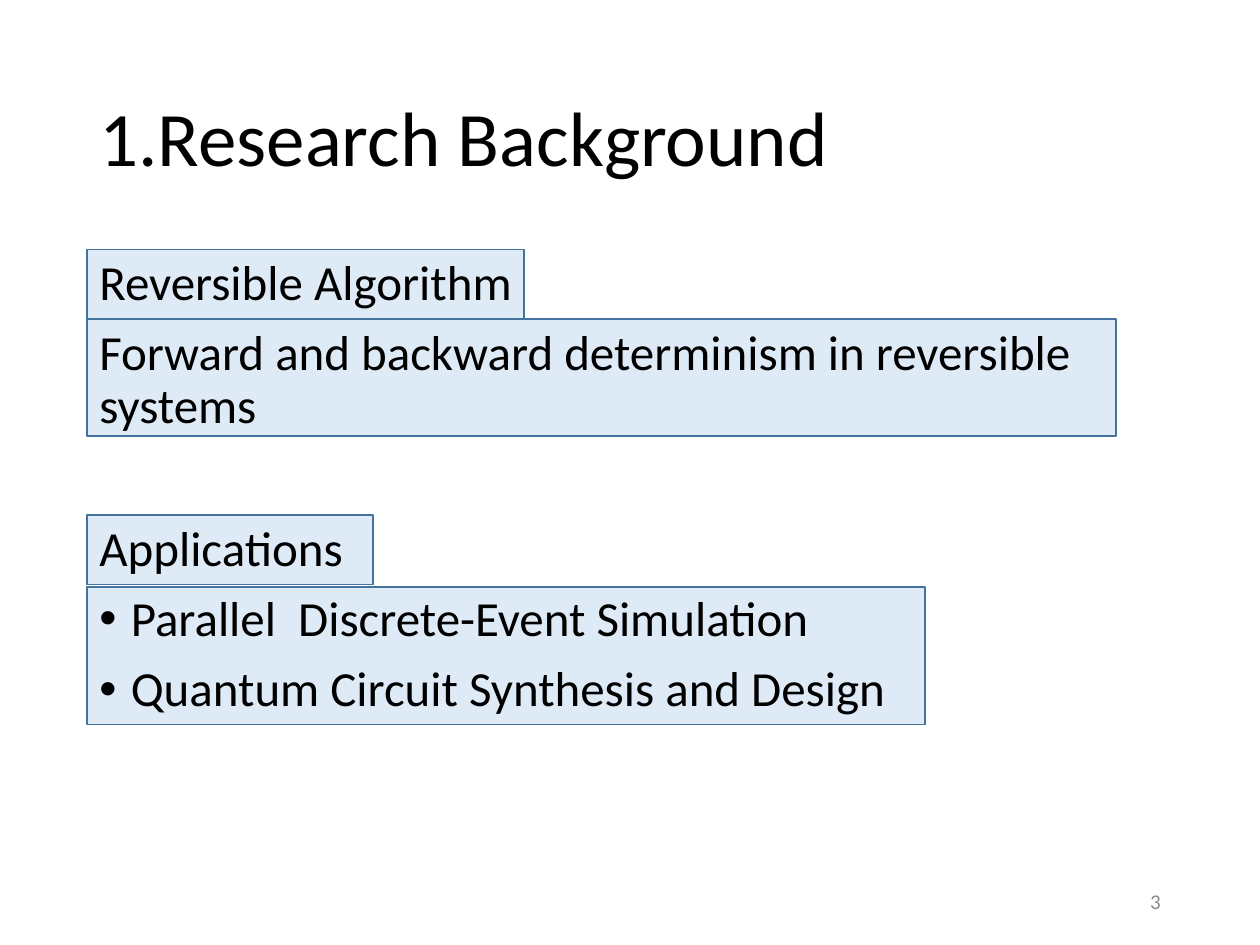
import pptx
import pptx.dml.color
import pptx.enum.shapes
import pptx.enum.text
import pptx.oxml
import pptx.oxml.ns
import pptx.util

EMU_PER_PX = 9144  # 100 px to the inch
ALIGN = pptx.enum.text.PP_ALIGN
ANCHOR = pptx.enum.text.MSO_ANCHOR


def px(length):
    return pptx.util.Emu(length * EMU_PER_PX)


def color(hex_string):
    return pptx.dml.color.RGBColor.from_string(hex_string)


def write(paragraph, text, size=28, text_color="000000", align=ALIGN.LEFT,
          line_spacing=0.9, space_before=0, bullet=False):
    paragraph.alignment = align
    paragraph.line_spacing = line_spacing
    paragraph.space_before = pptx.util.Pt(space_before)
    run = paragraph.add_run()
    run.text = text
    run.font.name = "Calibri"
    run.font.size = pptx.util.Pt(size)
    run.font.color.rgb = color(text_color)
    if bullet:
        properties = paragraph._p.get_or_add_pPr()
        properties.set("marL", str(px(25)))
        properties.set("indent", str(px(-25)))
        namespace = pptx.oxml.ns.nsdecls("a")
        for xml in (f'<a:buFont {namespace} typeface="Arial"/>',
                    f'<a:buChar {namespace} char="•"/>'):
            properties.append(pptx.oxml.parse_xml(xml))


class SlideBuilder:
    """Holds the panel style and the current slide."""

    panel_fill = "DEEBF7"
    panel_line = "43739E"

    def __init__(self, presentation):
        self.slide = presentation.slides.add_slide(presentation.slide_layouts[5])

    def title(self, text, left, top, width, height):
        shape = self.slide.shapes.title
        shape.left, shape.top = px(left), px(top)
        shape.width, shape.height = px(width), px(height)
        frame = shape.text_frame
        frame.auto_size = pptx.enum.text.MSO_AUTO_SIZE.NONE
        frame.vertical_anchor = ANCHOR.MIDDLE
        write(frame.paragraphs[0], text, size=44)

    def panel(self, left, top, width, height):
        shape = self.slide.shapes.add_shape(
            pptx.enum.shapes.MSO_SHAPE.RECTANGLE,
            px(left), px(top), px(width), px(height))
        shape.shadow.inherit = False
        shape.fill.solid()
        shape.fill.fore_color.rgb = color(self.panel_fill)
        shape.line.color.rgb = color(self.panel_line)
        shape.line.width = pptx.util.Pt(1)

    def text_box(self, paragraphs, left, top, width, height, anchor=ANCHOR.TOP):
        """Add a box from (text, format) pairs, one for each paragraph."""
        frame = self.slide.shapes.add_textbox(
            px(left), px(top), px(width), px(height)).text_frame
        frame.word_wrap = True
        frame.vertical_anchor = anchor
        for index, (text, text_format) in enumerate(paragraphs):
            paragraph = frame.add_paragraph() if index else frame.paragraphs[0]
            write(paragraph, text, **text_format)


def main():
    presentation = pptx.Presentation()
    presentation.slide_width, presentation.slide_height = px(1000), px(750)
    builder = SlideBuilder(presentation)
    left, content_width = 69, 862

    builder.title("1.Research Background", left, 40, content_width, 145)
    for top, width, height in ((466, 665, 109), (409, 227, 55),
                               (198, 347, 55), (253, 817, 93)):
        builder.panel(left, top, width, height)

    plain = {"space_before": 10}
    section = {"space_before": 51}
    bullet = {"space_before": 10, "bullet": True}
    builder.text_box([
        ("Reversible Algorithm", plain),
        ("Forward and backward determinism in reversible systems", plain),
        ("Applications", section),
        ("Parallel  Discrete-Event Simulation", bullet),
        ("Quantum Circuit Synthesis and Design", bullet),
    ], left, 200, content_width, 476)

    page_number = {"size": 12, "text_color": "8C8C8C",
                   "align": ALIGN.RIGHT, "line_spacing": 1.0}
    builder.text_box([("3", page_number)], 706, 695, 225, 40, ANCHOR.MIDDLE)

    presentation.save("out.pptx")


if __name__ == "__main__":
    main()
